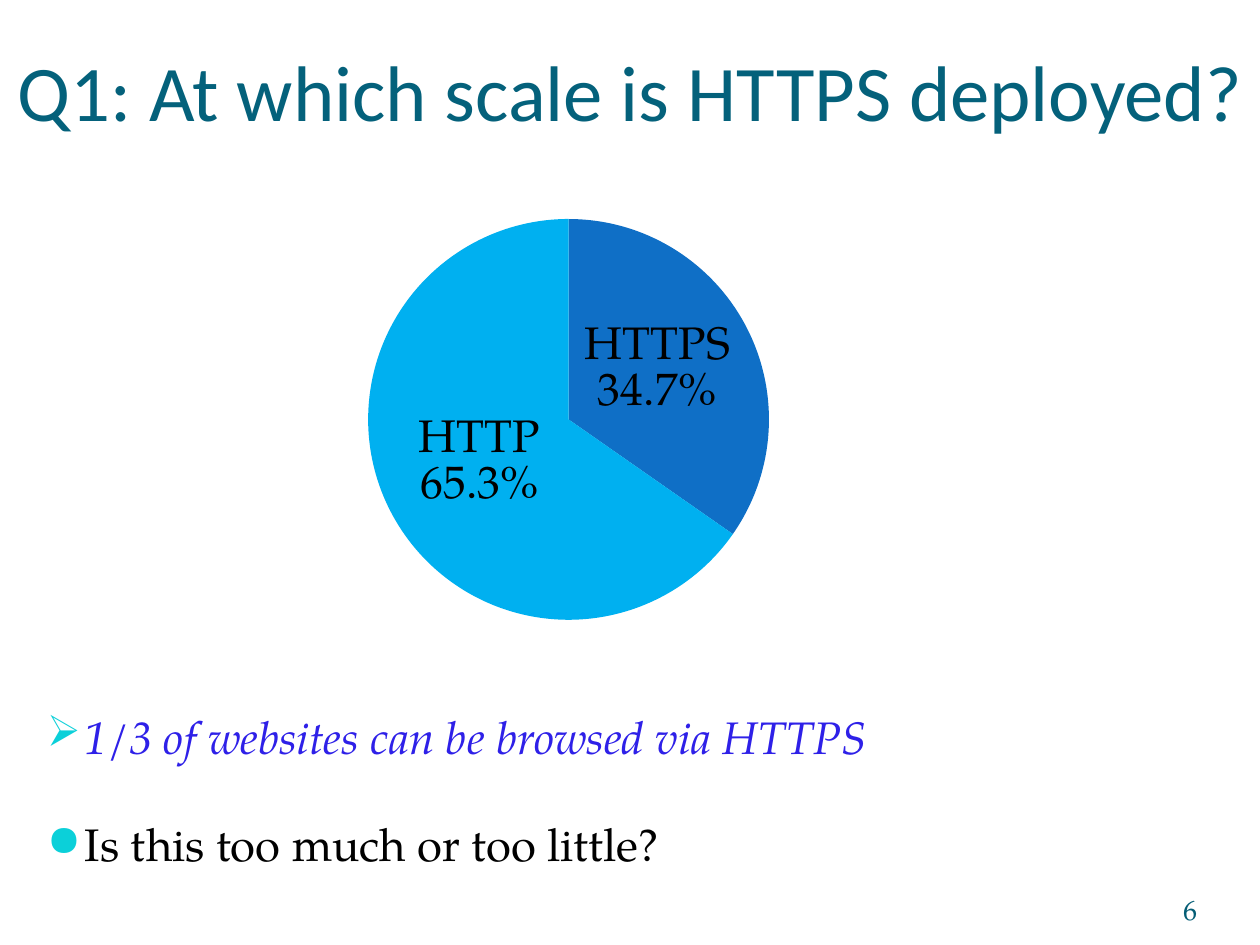
from dataclasses import dataclass

from lxml import etree
from pptx import Presentation
from pptx.chart.data import CategoryChartData
from pptx.dml.color import RGBColor
from pptx.enum.chart import XL_CHART_TYPE, XL_LABEL_POSITION
from pptx.enum.text import MSO_ANCHOR, PP_ALIGN
from pptx.oxml import parse_xml
from pptx.oxml.ns import nsdecls, qn
from pptx.util import Pt

PIE = XL_CHART_TYPE.PIE
LABEL_CENTER = XL_LABEL_POSITION.CENTER
LEFT, CENTER, RIGHT = PP_ALIGN.LEFT, PP_ALIGN.CENTER, PP_ALIGN.RIGHT
TOP, BOTTOM = MSO_ANCHOR.TOP, MSO_ANCHOR.BOTTOM
PX_PER_INCH = 126
PAGE_SIZE = (1260, 945)
SHARES = {"HTTPS": 0.347, "HTTP": 0.653}


@dataclass(frozen=True)
class Theme:
    """Fonts, colours and type sizes of the deck."""
    head_font: str = "Calibri"
    body_font: str = "TeX Gyre Pagella"
    title: str = "04617B"
    finding: str = "2E20E8"
    text: str = "000000"
    number: str = "045D75"
    bullet: str = "0BD0D9"
    slices: tuple = ("0F6FC6", "00B0F0")
    title_size: int = 45
    body_size: int = 26
    number_size: int = 16


THEME = Theme()


def px(length):
    """Turn a length in px into EMU."""
    return round(length * 914400 / PX_PER_INCH)


def set_all(target, values):
    """Set each attribute in values on target."""
    for name, value in values.items():
        setattr(target, name, value)


def set_font(font, name, size, color, italic=False):
    """Give a font its face, size, colour and slant."""
    set_all(font, {"name": name, "size": Pt(size), "italic": italic})
    font.color.rgb = RGBColor.from_string(color)


def add_text(page, box, text, font, align=LEFT, anchor=TOP, insets=(12, 6, 12, 6)):
    """Place one line of text in the box and return its paragraph."""
    frame = page.shapes.add_textbox(*map(px, box)).text_frame
    left, top, right, bottom = map(px, insets)
    set_all(frame, {
        "word_wrap": True, "vertical_anchor": anchor,
        "margin_left": left, "margin_top": top,
        "margin_right": right, "margin_bottom": bottom,
    })
    para = frame.paragraphs[0]
    para.alignment = align
    span = para.add_run()
    span.text = text
    set_font(span.font, **font)
    return para


def add_title(page, box, text):
    """Place the slide title in the box."""
    font = {"name": THEME.head_font, "size": THEME.title_size, "color": THEME.title}
    add_text(page, box, text, font, CENTER, insets=(0, 6, 0, 0))


def add_point(page, box, text, mark, color, italic=False):
    """Place a bulleted statement in the box."""
    font = {"name": THEME.body_font, "size": THEME.body_size,
            "color": color, "italic": italic}
    para = add_text(page, box, text, font)
    para.space_before = Pt(5)
    props = para._p.get_or_add_pPr()
    props.set("marL", str(px(38)))
    props.set("indent", str(px(-38)))
    bullet_color = etree.SubElement(props, qn("a:buClr"))
    etree.SubElement(bullet_color, qn("a:srgbClr"), val=THEME.bullet)
    etree.SubElement(props, qn("a:buSzPct"), val="95000")
    etree.SubElement(props, qn("a:buChar"), char=mark)


def add_page_number(page, box, text):
    """Place the page number at the lower right of the box."""
    font = {"name": THEME.body_font, "size": THEME.number_size, "color": THEME.number}
    add_text(page, box, text, font, RIGHT, BOTTOM, (0, 0, 0, 0))


def fix_plot_area(chart, box, inner):
    """Pin the plot area to the inner box, given relative to the chart box."""
    width, height = box[2:]
    sizes = (width, height, width, height)
    values = "".join(
        f'<c:{tag} val="{part / size:.3f}"/>'
        for tag, part, size in zip("xywh", inner, sizes)
    )
    layout = parse_xml(
        f'<c:layout {nsdecls("c")}><c:manualLayout><c:layoutTarget val="inner"/>'
        f'<c:xMode val="edge"/><c:yMode val="edge"/>{values}'
        "</c:manualLayout></c:layout>"
    )
    area = chart._chartSpace.chart.plotArea
    for old in area.findall(qn("c:layout")):
        area.remove(old)
    area.insert(0, layout)


def add_share_pie(page, box):
    """Place the pie of protocol shares in the box."""
    data = CategoryChartData(number_format="0.0%")
    data.categories = list(SHARES)
    data.add_series("Websites", list(SHARES.values()))
    chart = page.shapes.add_chart(PIE, *map(px, box), data).chart
    set_all(chart, {"has_legend": False, "has_title": False})
    set_font(chart.font, THEME.body_font, THEME.body_size, THEME.text)
    plot = chart.plots[0]
    set_all(plot, {"vary_by_categories": True, "has_data_labels": True})
    for index, color in enumerate(THEME.slices):
        fill = plot.series[0].points[index].format.fill
        fill.solid()
        fill.fore_color.rgb = RGBColor.from_string(color)
    labels = plot.data_labels
    set_all(labels, {
        "show_category_name": True, "show_percentage": True, "show_value": False,
        "number_format": "0.0%", "number_format_is_linked": False,
        "position": LABEL_CENTER,
    })
    set_font(labels.font, THEME.body_font, THEME.body_size, THEME.text)
    separator = etree.Element(qn("c:separator"))
    separator.text = "\n"
    labels._element.find(qn("c:showBubbleSize")).addnext(separator)
    fix_plot_area(chart, box, (174, 54, 401, 401))


def main():
    """Build the slide and save the deck."""
    deck = Presentation()
    deck.slide_width, deck.slide_height = map(px, PAGE_SIZE)
    page = deck.slides.add_slide(deck.slide_layouts[6])
    add_title(page, (15, 37, 1230, 157), "Q1: At which scale is HTTPS deployed?")
    add_share_pie(page, (194, 165, 774, 510))
    add_point(page, (35, 703, 1134, 97), "1/3 of websites can be browsed via HTTPS",
              "➢", THEME.finding, italic=True)
    add_point(page, (35, 810, 883, 79), "Is this too much or too little?",
              "●", THEME.text)
    add_page_number(page, (1092, 876, 105, 50), "6")
    deck.save("out.pptx")


if __name__ == "__main__":
    main()
